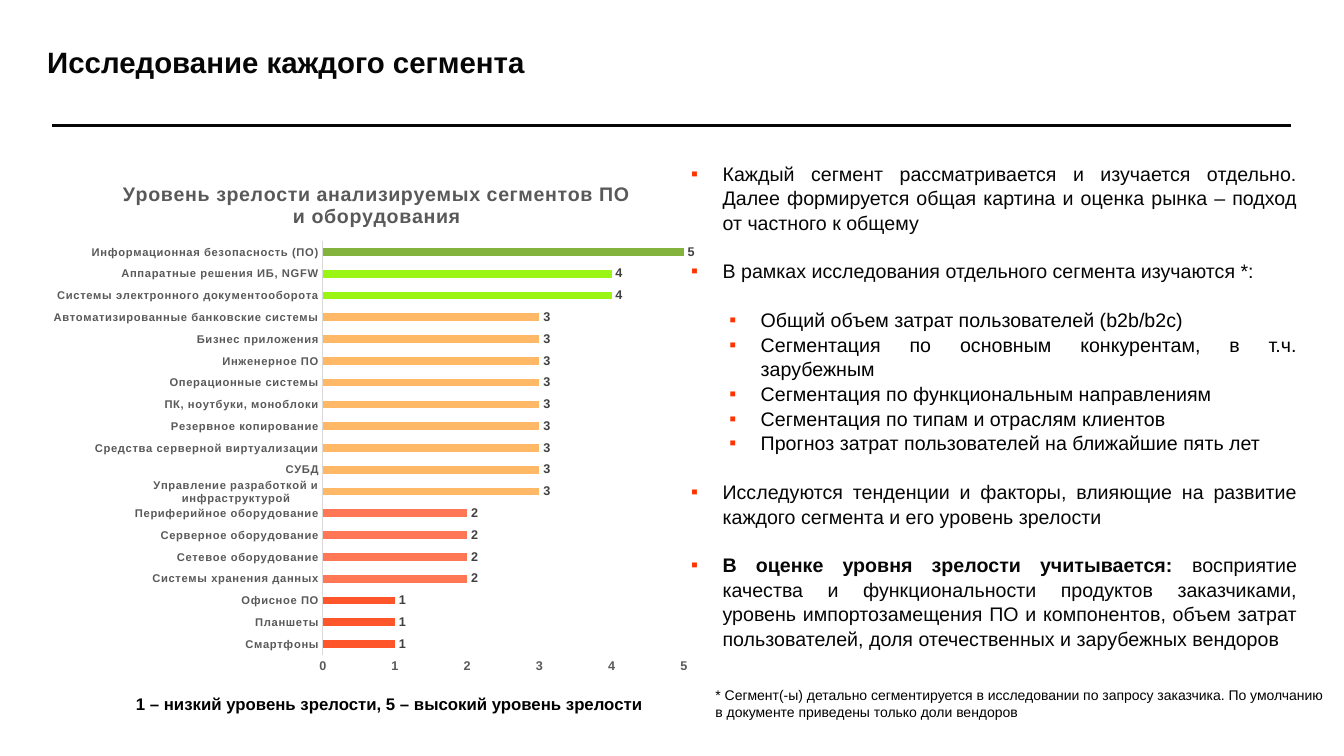
from dataclasses import dataclass
from typing import Any

from lxml import etree
from pptx import Presentation
from pptx.chart.data import CategoryChartData
from pptx.dml.color import RGBColor
from pptx.enum.chart import XL_CHART_TYPE, XL_LABEL_POSITION, XL_TICK_MARK
from pptx.enum.shapes import MSO_CONNECTOR
from pptx.enum.text import MSO_ANCHOR, MSO_AUTO_SIZE, PP_ALIGN
from pptx.oxml import parse_xml
from pptx.oxml.ns import nsdecls, qn
from pptx.util import Cm, Pt

BAR = XL_CHART_TYPE.BAR_CLUSTERED
OUTSIDE_END = XL_LABEL_POSITION.OUTSIDE_END
NO_TICK = XL_TICK_MARK.NONE
STRAIGHT = MSO_CONNECTOR.STRAIGHT
TOP = MSO_ANCHOR.TOP
NO_FIT = MSO_AUTO_SIZE.NONE
LEFT, CENTER, JUSTIFY = PP_ALIGN.LEFT, PP_ALIGN.CENTER, PP_ALIGN.JUSTIFY

INK, BLACK, GRAY, LABEL_GRAY = "060606", "000000", "595959", "404040"
AXIS_GRAY, BULLET_RED = "D9D9D9", "FF3300"
LINE_GAP = 17


@dataclass
class Maturity:
    score: int
    color: str
    segments: list[str]


@dataclass
class Point:
    text: str
    level: int = 0
    gap: int = 0
    lead: str = ""


@dataclass
class Note:
    text: str
    box: tuple[float, float, float, float]
    size: int
    bold: bool
    align: Any


MATURITIES = [
    Maturity(1, "FF552A", ["Смартфоны", "Планшеты", "Офисное ПО"]),
    Maturity(2, "FF7755", [
        "Системы хранения данных", "Сетевое оборудование",
        "Серверное оборудование", "Периферийное оборудование"]),
    Maturity(3, "FFB866", [
        "Управление разработкой и инфраструктурой", "СУБД",
        "Средства серверной виртуализации", "Резервное копирование",
        "ПК, ноутбуки, моноблоки", "Операционные системы", "Инженерное ПО",
        "Бизнес приложения", "Автоматизированные банковские системы"]),
    Maturity(4, "9AF514", [
        "Системы электронного документооборота", "Аппаратные решения ИБ, NGFW"]),
    Maturity(5, "83B23D", ["Информационная безопасность (ПО)"]),
]

POINTS = [
    Point("Каждый сегмент рассматривается и изучается отдельно. Далее формируется "
          "общая картина и оценка рынка – подход от частного к общему"),
    Point("В рамках исследования отдельного сегмента изучаются *:", gap=LINE_GAP),
    Point("Общий объем затрат пользователей (b2b/b2c)", 1, LINE_GAP),
    Point("Сегментация по основным конкурентам, в т.ч. зарубежным", 1),
    Point("Сегментация по функциональным направлениям", 1),
    Point("Сегментация по типам и отраслям клиентов", 1),
    Point("Прогноз затрат пользователей на ближайшие пять лет", 1),
    Point("Исследуются тенденции и факторы, влияющие на развитие каждого сегмента "
          "и его уровень зрелости", gap=LINE_GAP),
    Point("восприятие качества и функциональности продуктов заказчиками, уровень "
          "импортозамещения ПО и компонентов, объем затрат пользователей, доля "
          "отечественных и зарубежных вендоров", gap=LINE_GAP,
          lead="В оценке уровня зрелости учитывается: "),
]

NOTES = [
    Note("1 – низкий уровень зрелости, 5 – высокий уровень зрелости",
         (0.94, 17.35, 17.75, 0.76), 12, True, CENTER),
    Note("* Сегмент(-ы) детально сегментируется в исследовании по запросу заказчика. "
         "По умолчанию в документе приведены только доли вендоров",
         (17.78, 17.17, 15.93, 1.12), 10, False, LEFT),
]


def rgb(color: str) -> RGBColor:
    return RGBColor.from_string(color)


def apply(target: Any, values: dict[str, Any]) -> None:
    for name, value in values.items():
        setattr(target, name, value)


def style(font: Any, size: int, color: str, bold: bool = False) -> None:
    apply(font, {"name": "Arial", "size": Pt(size), "bold": bold})
    font.color.rgb = rgb(color)


def place(shape: Any, left: float, top: float, width: float, height: float) -> None:
    apply(shape, {"left": Cm(left), "top": Cm(top),
                  "width": Cm(width), "height": Cm(height)})
    apply(shape.text_frame, {
        "margin_left": 0, "margin_right": 0, "margin_top": 0, "margin_bottom": 0,
        "word_wrap": True, "auto_size": NO_FIT, "vertical_anchor": TOP})


def add_title(slide: Any) -> None:
    title = slide.shapes.title
    place(title, 1.19, 1.12, 30.48, 0.89)
    heading = title.text_frame.paragraphs[0]
    heading.text = "Исследование каждого сегмента"
    heading.alignment = LEFT
    style(heading.runs[0].font, 21, INK, True)

    rule = slide.shapes.add_connector(STRAIGHT, Cm(1.32), Cm(3.16), Cm(32.54), Cm(3.16))
    rule.line.width = Pt(2)
    rule.line.color.rgb = rgb(INK)
    etree.SubElement(rule._element.spPr, qn("a:effectLst"))


def add_points(slide: Any) -> None:
    body = slide.placeholders[1]
    place(body, 17.42, 4.04, 15.27, 13.3)
    frame = body.text_frame
    for index, point in enumerate(POINTS):
        paragraph = frame.add_paragraph() if index else frame.paragraphs[0]
        apply(paragraph, {"level": point.level, "alignment": JUSTIFY, "line_spacing": 1.05,
                          "space_before": Pt(point.gap), "space_after": Pt(0)})
        properties = paragraph._p.get_or_add_pPr()
        properties.set("marL", str(Cm(0.79 + 0.96 * point.level)))
        properties.set("indent", str(-Cm(0.79)))
        bullet_color = etree.SubElement(properties, qn("a:buClr"))
        etree.SubElement(bullet_color, qn("a:srgbClr"), val=BULLET_RED)
        etree.SubElement(properties, qn("a:buChar"), char="▪")
        for text, bold in ((point.lead, True), (point.text, False)):
            if text:
                run = paragraph.add_run()
                run.text = text
                style(run.font, 14, BLACK if point.level else INK, bold)


def set_layout(parent: Any, values: dict[str, Any]) -> None:
    for old in parent.findall(qn("c:layout")):
        parent.remove(old)
    items = "".join(f'<c:{name} val="{value}"/>' for name, value in values.items())
    layout = parse_xml(f'<c:layout {nsdecls("c")}><c:manualLayout>{items}'
                       '</c:manualLayout></c:layout>')
    before = parent.find(qn("c:tx"))
    if before is None:
        parent.insert(0, layout)
    else:
        before.addnext(layout)


def add_maturity_chart(slide: Any) -> None:
    bars = [(segment, level) for level in MATURITIES for segment in level.segments]
    data = CategoryChartData()
    data.categories = [segment for segment, _ in bars]
    data.add_series("Series 1", [level.score for _, level in bars])
    chart = slide.shapes.add_chart(BAR, Cm(1.19), Cm(3.96), Cm(16.54), Cm(13.21), data).chart
    style(chart.font, 10, BLACK)
    chart.has_legend = False

    heading = chart.chart_title.text_frame.paragraphs[0]
    heading.text = "Уровень зрелости анализируемых сегментов ПО и оборудования"
    style(heading.runs[0].font, 14, GRAY, True)
    set_layout(chart.chart_title._element,
               {"xMode": "edge", "yMode": "edge", "x": 0.11, "y": 0.04})
    set_layout(chart._chartSpace.chart.plotArea,
               {"layoutTarget": "inner", "xMode": "edge", "yMode": "edge",
                "x": 0.42, "y": 0.16, "w": 0.55, "h": 0.79})

    for axis, size in ((chart.category_axis, 8), (chart.value_axis, 9)):
        apply(axis, {"major_tick_mark": NO_TICK, "minor_tick_mark": NO_TICK,
                     "has_major_gridlines": False})
        style(axis.tick_labels.font, size, GRAY, True)
    for font in (heading.runs[0].font, chart.category_axis.tick_labels.font):
        font._element.set("spc", "30")
    axis_line = chart.category_axis.format.line
    axis_line.color.rgb = rgb(AXIS_GRAY)
    axis_line.width = Pt(0.75)
    apply(chart.value_axis, {"minimum_scale": 0, "maximum_scale": 5, "major_unit": 1})
    chart.value_axis.format.line.fill.background()

    plot = chart.plots[0]
    apply(plot, {"gap_width": 182, "vary_by_categories": False, "has_data_labels": True})
    apply(plot.data_labels, {"show_value": True, "position": OUTSIDE_END})
    style(plot.data_labels.font, 9, LABEL_GRAY, True)
    for index, (_, level) in enumerate(bars):
        fill = plot.series[0].points[index].format.fill
        fill.solid()
        fill.fore_color.rgb = rgb(level.color)


def add_note(slide: Any, note: Note) -> None:
    caption = slide.shapes.add_textbox(*(Cm(length) for length in note.box))
    caption.text_frame.word_wrap = True
    paragraph = caption.text_frame.paragraphs[0]
    apply(paragraph, {"text": note.text, "alignment": note.align})
    style(paragraph.runs[0].font, note.size, BLACK, note.bold)


def main() -> None:
    deck = Presentation()
    apply(deck, {"slide_width": Cm(33.87), "slide_height": Cm(19.05)})
    slide = deck.slides.add_slide(deck.slide_layouts[1])
    add_title(slide)
    add_points(slide)
    add_maturity_chart(slide)
    for note in NOTES:
        add_note(slide, note)
    deck.save("out.pptx")


if __name__ == "__main__":
    main()
